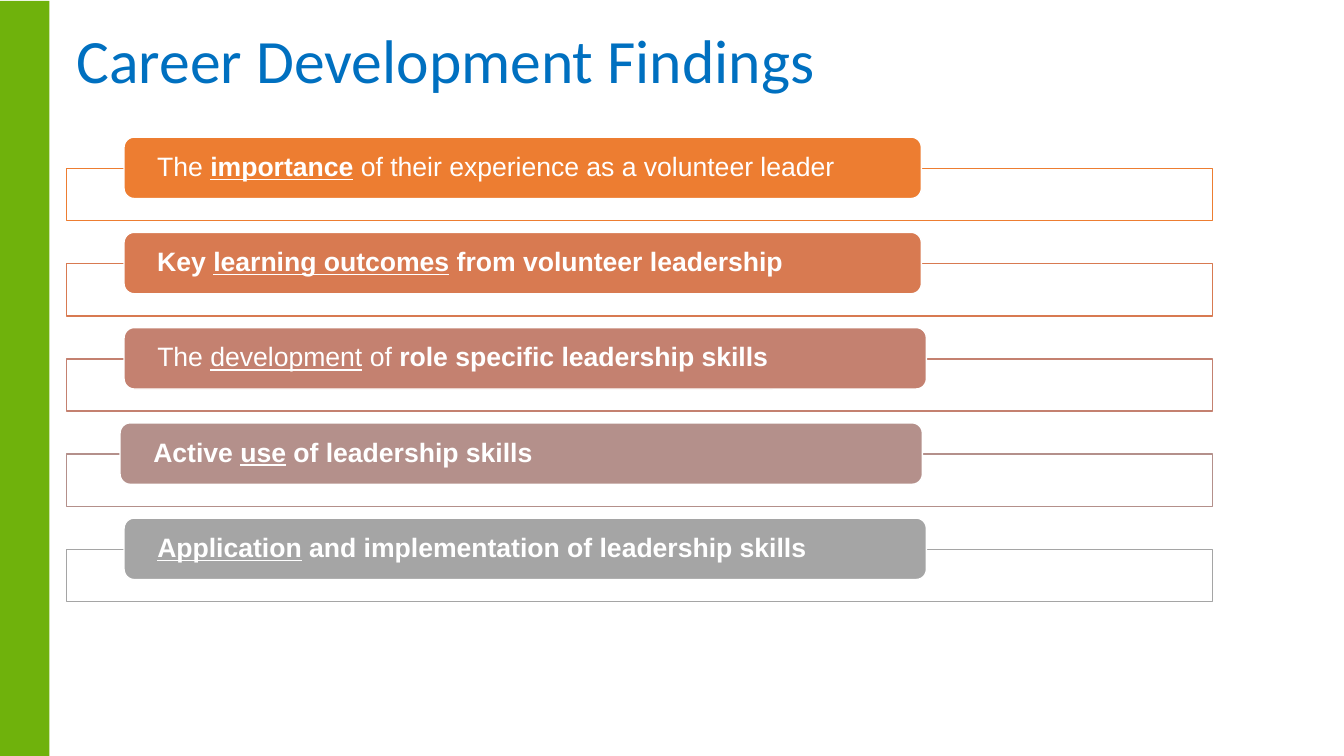
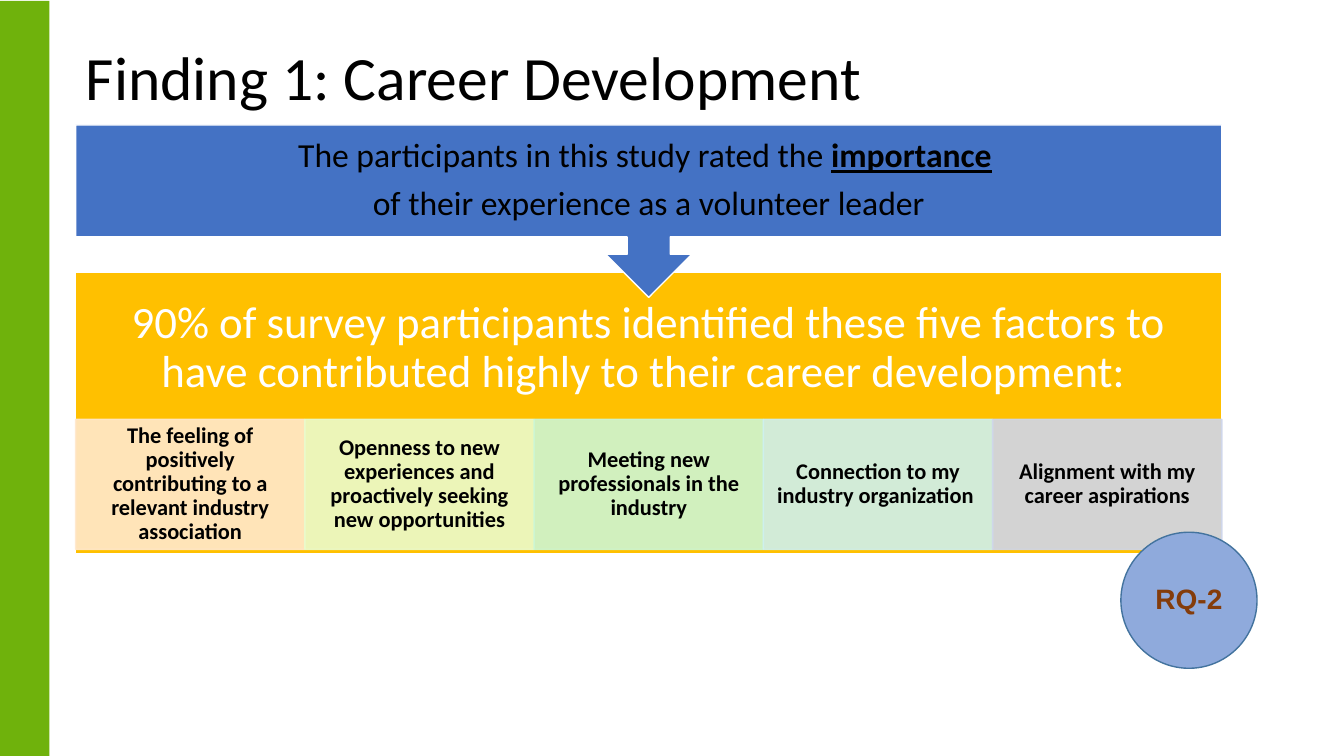
import lxml.etree
import pptx
import pptx.dml.color
import pptx.enum.shapes
import pptx.enum.text
import pptx.oxml.ns
import pptx.util

RGBColor = pptx.dml.color.RGBColor
Shape = pptx.enum.shapes.MSO_SHAPE
Align = pptx.enum.text.PP_ALIGN
Pt = pptx.util.Pt

WHITE = RGBColor(0xFF, 0xFF, 0xFF)
BLACK = RGBColor(0x00, 0x00, 0x00)
GREEN = RGBColor(0x6F, 0xB2, 0x0C)
TITLE_BLUE = RGBColor(0x00, 0x70, 0xC0)
CALLOUT_BLUE = RGBColor(0x44, 0x72, 0xC4)
GOLD = RGBColor(0xFF, 0xC0, 0x00)
BADGE_BLUE = RGBColor(0x8F, 0xAA, 0xDC)
BADGE_EDGE = RGBColor(0x43, 0x73, 0x9E)
BROWN = RGBColor(0x84, 0x3C, 0x0B)
ORANGE = RGBColor(0xED, 0x7D, 0x31)
COPPER = RGBColor(0xD8, 0x7A, 0x51)
ROSE = RGBColor(0xC4, 0x81, 0x70)
MAUVE = RGBColor(0xB4, 0x90, 0x8B)
GREY = RGBColor(0xA5, 0xA5, 0xA5)
PEACH = RGBColor(0xFF, 0xE8, 0xCC)
LIME = RGBColor(0xEA, 0xFB, 0xCC)
MINT = RGBColor(0xCC, 0xF6, 0xD3)
AQUA = RGBColor(0xCE, 0xF0, 0xEF)
PERIWINKLE = RGBColor(0xCF, 0xD6, 0xEA)

CONTENT_WIDTH = 85.28
TITLE_ONLY = 5

FINDINGS = [
    (ORANGE, 9.23, 59.33, [("The ", ""), ("importance", "bu"),
                           (" of their experience as a volunteer leader", "")]),
    (COPPER, 9.23, 59.33, [("Key ", "b"), ("learning outcomes", "bu"),
                           (" from volunteer leadership", "b")]),
    (ROSE, 9.23, 59.7, [("The ", ""), ("development", "u"), (" of ", ""),
                        ("role specific leadership skills", "b")]),
    (MAUVE, 8.93, 59.7, [("Active ", "b"), ("use", "bu"),
                         (" of leadership skills", "b")]),
    (GREY, 9.23, 59.7, [("Application", "bu"),
                        (" and implementation of leadership skills", "b")]),
]

FACTORS = [
    (PEACH, "The feeling of positively contributing to a relevant industry association"),
    (LIME, "Openness to new experiences and proactively seeking new opportunities"),
    (MINT, "Meeting new professionals in the industry"),
    (AQUA, "Connection to my industry organization "),
    (PERIWINKLE, "Alignment with my career aspirations"),
]


class Deck:
    def __init__(self):
        self.deck = pptx.Presentation()
        self.deck.slide_width = pptx.util.Inches(13.33)
        self.deck.slide_height = pptx.util.Inches(7.5)
        self.page = None

    def area(self, left, top, width, height):
        across, down = self.deck.slide_width, self.deck.slide_height
        return (int(left * across / 100), int(top * down / 100),
                int(width * across / 100), int(height * down / 100))

    def new_page(self, title, left, top, color):
        layout = self.deck.slide_layouts[TITLE_ONLY]
        self.page = self.deck.slides.add_slide(layout)
        box = self.page.shapes.title
        box.left, box.top, box.width, box.height = self.area(left, top, CONTENT_WIDTH, 16.8)
        self.text(box, [[(title, "")]], 44, color, align=Align.LEFT, insets=(7.2, 3.6))

    def master_band(self):
        band = self.shape(Shape.RECTANGLE, (0, 0.13, 3.68, 99.87), GREEN)
        self.deck.slide_master.element.cSld.spTree.insert(2, band.element)

    def shape(self, kind, place, fill, line=None, opacity=None):
        box = self.page.shapes.add_shape(kind, *self.area(*place))
        box.shadow.inherit = False
        box.fill.solid()
        box.fill.fore_color.rgb = fill
        if line is None:
            box.line.fill.background()
        else:
            box.line.color.rgb = line
            box.line.width = Pt(1)
        if opacity is not None:
            for color in box.element.spPr.iter(pptx.oxml.ns.qn("a:srgbClr")):
                alpha = lxml.etree.SubElement(color, pptx.oxml.ns.qn("a:alpha"))
                alpha.set("val", str(opacity * 1000))
        return box

    def text(self, box, paragraphs, size, color, font="Calibri", align=Align.CENTER,
             insets=(0, 0), bottom=None, bold=None, gap=0):
        frame = box.text_frame
        frame.word_wrap = True
        frame.auto_size = pptx.enum.text.MSO_AUTO_SIZE.NONE
        frame.vertical_anchor = pptx.enum.text.MSO_ANCHOR.MIDDLE
        side, end = insets
        frame.margin_left = frame.margin_right = Pt(side)
        frame.margin_top = Pt(end)
        frame.margin_bottom = Pt(end if bottom is None else bottom)
        for index, spans in enumerate(paragraphs):
            para = frame.add_paragraph() if index else frame.paragraphs[0]
            para.alignment = align
            para.line_spacing = 0.9
            para.space_before = Pt(0)
            para.space_after = Pt(gap)
            para.font.name = font
            para.font.size = Pt(size)
            para.font.color.rgb = color
            para.font.bold = bold
            for words, marks in spans:
                span = para.add_run()
                span.text = words
                if "b" in marks:
                    span.font.bold = True
                if "u" in marks:
                    span.font.underline = True

    def finding(self, row, color, left, width, spans):
        offset = row * 12.6
        self.shape(Shape.RECTANGLE, (4.95, 22.27 + offset, CONTENT_WIDTH, 6.93), WHITE, color)
        pill = self.shape(Shape.ROUNDED_RECTANGLE, (left, 18.13 + offset, width, 8.13), color, WHITE)
        self.text(pill, [spans], 19, WHITE, "Arial", Align.LEFT, insets=(21.6, 0))

    def factor(self, column, color, words):
        width = CONTENT_WIDTH / len(FACTORS)
        place = (5.63 + column * width, 55.47, width, 17.2)
        cell = self.shape(Shape.RECTANGLE, place, color, color, opacity=90)
        self.text(cell, [[(words, "")]], 16, BLACK, insets=(8.96, 1.28), bold=True)

    def panel(self, words):
        box = self.shape(Shape.RECTANGLE, (5.63, 36, CONTENT_WIDTH, 37.2), GOLD, WHITE)
        self.text(box, [[(words, "")]], 32, WHITE, insets=(18, 18), bottom=110)

    def callout(self, paragraphs):
        place = (5.63, 16.53, CONTENT_WIDTH, 22.8)
        box = self.shape(Shape.DOWN_ARROW_CALLOUT, place, CALLOUT_BLUE, WHITE)
        self.text(box, paragraphs, 24, BLACK, insets=(13.68, 13.68), gap=8.4)

    def badge(self, words):
        circle = self.shape(Shape.OVAL, (83.4, 70.4, 10.13, 18), BADGE_BLUE, BADGE_EDGE)
        self.text(circle, [[(words, "")]], 20, BROWN, "Arial", bold=True)


def main():
    slides = Deck()

    slides.new_page("Career Development Findings", 4.95, 0, TITLE_BLUE)
    slides.master_band()
    for row, finding in enumerate(FINDINGS):
        slides.finding(row, *finding)

    slides.new_page("Finding 1: Career Development", 5.63, 2.27, BLACK)
    slides.panel("90% of survey participants identified these five factors to "
                 "have contributed highly to their career development: ")
    for column, factor in enumerate(FACTORS):
        slides.factor(column, *factor)
    slides.callout([
        [("The participants in this study rated the ", ""), ("importance", "bu"), (" ", "")],
        [("of their experience as a volunteer leader", "")],
    ])
    slides.badge("RQ-2")

    slides.deck.save("out.pptx")


if __name__ == "__main__":
    main()
